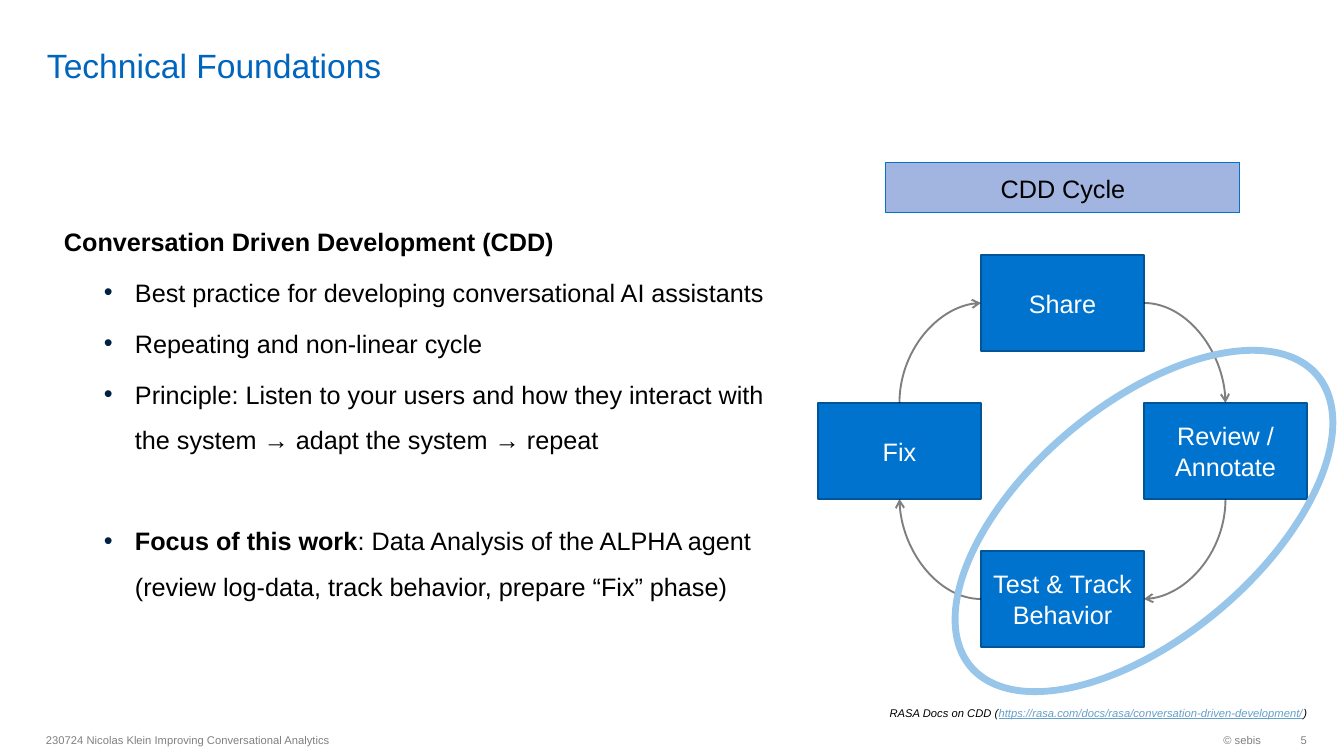
from lxml import etree
from pptx import Presentation
from pptx import util as u
from pptx.dml.color import RGBColor
from pptx.enum import shapes, text
from pptx.oxml.ns import qn

SLIDE_W, SLIDE_H = 1344, 756
EMU_PER_PX = u.Inches(13.3333) / SLIDE_W

TITLE_BLUE = RGBColor(0x00, 0x65, 0xBD)
BOX_BLUE = RGBColor(0x00, 0x73, 0xCF)
EDGE_BLUE = RGBColor(0x00, 0x55, 0x99)
HEADER_BLUE = RGBColor(0xA2, 0xB5, 0xE1)
RING_BLUE = RGBColor(0x98, 0xC6, 0xEA)
LINK_BLUE = RGBColor(0x64, 0xA0, 0xC8)
BULLET_NAVY = RGBColor(0x00, 0x21, 0x43)
GREY = RGBColor(0x80, 0x80, 0x80)
BLACK = RGBColor(0, 0, 0)
WHITE = RGBColor(0xFF, 0xFF, 0xFF)

LEFT, CENTER, RIGHT = text.PP_ALIGN.LEFT, text.PP_ALIGN.CENTER, text.PP_ALIGN.RIGHT
TOP, MIDDLE, BOTTOM = text.MSO_ANCHOR.TOP, text.MSO_ANCHOR.MIDDLE, text.MSO_ANCHOR.BOTTOM


def px(n):
    return u.Emu(round(n * EMU_PER_PX))


def add_run(p, words, size=18, color=BLACK, bold=False, italic=False, underline=False):
    r = p.add_run()
    r.text = words
    f = r.font
    f.name, f.size, f.bold, f.italic, f.underline = "Arial", u.Pt(size), bold, italic, underline
    f.color.rgb = color


def set_frame(tf, anchor=TOP, insets=(10, 5, 10, 5)):
    tf.word_wrap = True
    tf.vertical_anchor = anchor
    tf.margin_left, tf.margin_top, tf.margin_right, tf.margin_bottom = map(px, insets)


def add_text(s, box, words, align=LEFT, anchor=MIDDLE, insets=(10, 5, 10, 5), **fmt):
    """Place one line of text; words is a string or a list of (string, format) runs."""
    tf = s.shapes.add_textbox(*map(px, box)).text_frame
    set_frame(tf, anchor, insets)
    p = tf.paragraphs[0]
    p.alignment = align
    for part, extra in [(words, {})] if isinstance(words, str) else words:
        add_run(p, part, **{**fmt, **extra})


def add_box(s, box, words, fill, line, width, color):
    sp = s.shapes.add_shape(shapes.MSO_SHAPE.RECTANGLE, *map(px, box))
    sp.shadow.inherit = False
    sp.fill.solid()
    sp.fill.fore_color.rgb = fill
    sp.line.color.rgb = line
    sp.line.width = u.Pt(width)
    set_frame(sp.text_frame, MIDDLE)
    p = sp.text_frame.paragraphs[0]
    p.alignment = CENTER
    add_run(p, words, color=color)
    return sp


def add_bullet(p):
    pPr = p._p.get_or_add_pPr()
    pPr.set("marL", str(px(71)))
    pPr.set("indent", str(px(-31)))
    color = etree.SubElement(pPr, qn("a:buClr"))
    etree.SubElement(color, qn("a:srgbClr"), val=str(BULLET_NAVY))
    etree.SubElement(pPr, qn("a:buFont"), typeface="Arial")
    etree.SubElement(pPr, qn("a:buChar"), char="•")


def add_arc(s, start, start_site, end, end_site, turns):
    """Join two boxes by a quarter arc, turned clockwise by a number of right angles."""
    c = s.shapes.add_connector(shapes.MSO_CONNECTOR.CURVE, 0, 0, 0, 0)
    c.begin_connect(start, start_site)
    c.end_connect(end, end_site)
    spPr = c._element.spPr
    spPr.find(qn("a:prstGeom")).set("prst", "curvedConnector2")
    xfrm = spPr.find(qn("a:xfrm"))
    for flip in ("flipH", "flipV"):
        xfrm.attrib.pop(flip, None)
    xfrm.set("rot", str(turns * 90 * 60000))
    if turns % 2:
        w, h = c.width, c.height
        c.left, c.top = c.left + (w - h) // 2, c.top + (h - w) // 2
        c.width, c.height = h, w
    c.line.color.rgb = BLACK
    c.line.width = u.Pt(1.35)
    ln = spPr.find(qn("a:ln"))
    etree.SubElement(next(ln.iter(qn("a:srgbClr"))), qn("a:alpha"), val="50000")
    etree.SubElement(ln, qn("a:tailEnd"), type="arrow")
    etree.SubElement(spPr, qn("a:effectLst"))


def add_cdd_text(s, box):
    tf = s.shapes.add_textbox(*map(px, box)).text_frame
    set_frame(tf)
    heading = tf.paragraphs[0]
    heading.line_spacing = 1.5
    add_run(heading, "Conversation Driven Development (CDD)", bold=True)
    # Each bullet: space before in points, bold lead-in, plain text
    bullets = [
        (4, "", "Best practice for developing conversational AI assistants"),
        (4, "", "Repeating and non-linear cycle"),
        (4, "", "Principle: Listen to your users and how they interact with "
                "the system → adapt the system → repeat"),
        (40, "Focus of this work", ": Data Analysis of the ALPHA agent "
                                   "(review log-data, track behavior, prepare “Fix” phase)"),
    ]
    for gap, lead, words in bullets:
        p = tf.add_paragraph()
        p.line_spacing = 1.5
        p.space_before = u.Pt(gap)
        add_bullet(p)
        if lead:
            add_run(p, lead, bold=True)
        add_run(p, words)


def add_cycle(s, box):
    x, y, w, h = box
    add_box(s, (x + 68, y, 354, 50), "CDD Cycle", HEADER_BLUE, BOX_BLUE, 0.75, BLACK)

    # Four steps on a 3 x 3 grid below the header, clockwise from the top
    node_w, node_h, grid_top = w // 3, 96, 92
    row_step = (h - grid_top - node_h) // 2
    steps = [("Share", 1, 0), ("Review / Annotate", 2, 1),
             ("Test & Track Behavior", 1, 2), ("Fix", 0, 1)]
    nodes = [add_box(s, (x + col * node_w, y + grid_top + row * row_step, node_w, node_h),
                     name, BOX_BLUE, EDGE_BLUE, 0.85, WHITE)
             for name, col, row in steps]

    # Arcs between neighbours: sites are 0 top, 1 left, 2 bottom, 3 right
    for i, (start_site, end_site) in enumerate([(3, 0), (2, 3), (1, 2), (0, 1)]):
        add_arc(s, nodes[i], start_site, nodes[(i + 1) % 4], end_site, i)


def add_focus_ring(s, box):
    ring = s.shapes.add_shape(shapes.MSO_SHAPE.DONUT, *map(px, box))
    ring.adjustments[0] = 0.03
    ring.rotation = 320
    ring.shadow.inherit = False
    ring.fill.solid()
    ring.fill.fore_color.rgb = RING_BLUE
    ring.line.fill.background()


def add_footer(s, box):
    x, y, w, h = box
    fmt = dict(size=8, color=GREY)
    add_text(s, (x, y, 635, h), "230724 Nicolas Klein Improving Conversational Analytics", **fmt)
    add_text(s, (x + w - 272, y, 236, h), "© sebis", align=RIGHT, **fmt)
    add_text(s, (x + w - 36, y, 36, h), "5", align=RIGHT, insets=(10, 5, 0, 5), **fmt)


def main():
    prs = Presentation()
    prs.slide_width, prs.slide_height = px(SLIDE_W), px(SLIDE_H)
    s = prs.slides.add_slide(prs.slide_layouts[6])

    add_text(s, (37, 5, 1167, 80), "Technical Foundations", anchor=BOTTOM,
             insets=(10, 0, 10, 0), size=24, color=TITLE_BLUE)
    add_cdd_text(s, (54, 206, 746, 349))
    add_cycle(s, (818, 163, 489, 484))
    add_focus_ring(s, (914, 401, 460, 240))
    source = [("RASA Docs on CDD (", {}),
              ("https://rasa.com/docs/rasa/conversation-driven-development/",
               dict(color=LINK_BLUE, underline=True)),
              (")", {})]
    add_text(s, (36, 701, 1271, 24), source, align=RIGHT, anchor=TOP,
             insets=(10, 5, 0, 5), size=8, italic=True)
    add_footer(s, (36, 724, 1271, 32))
    prs.save("out.pptx")


if __name__ == "__main__":
    main()
